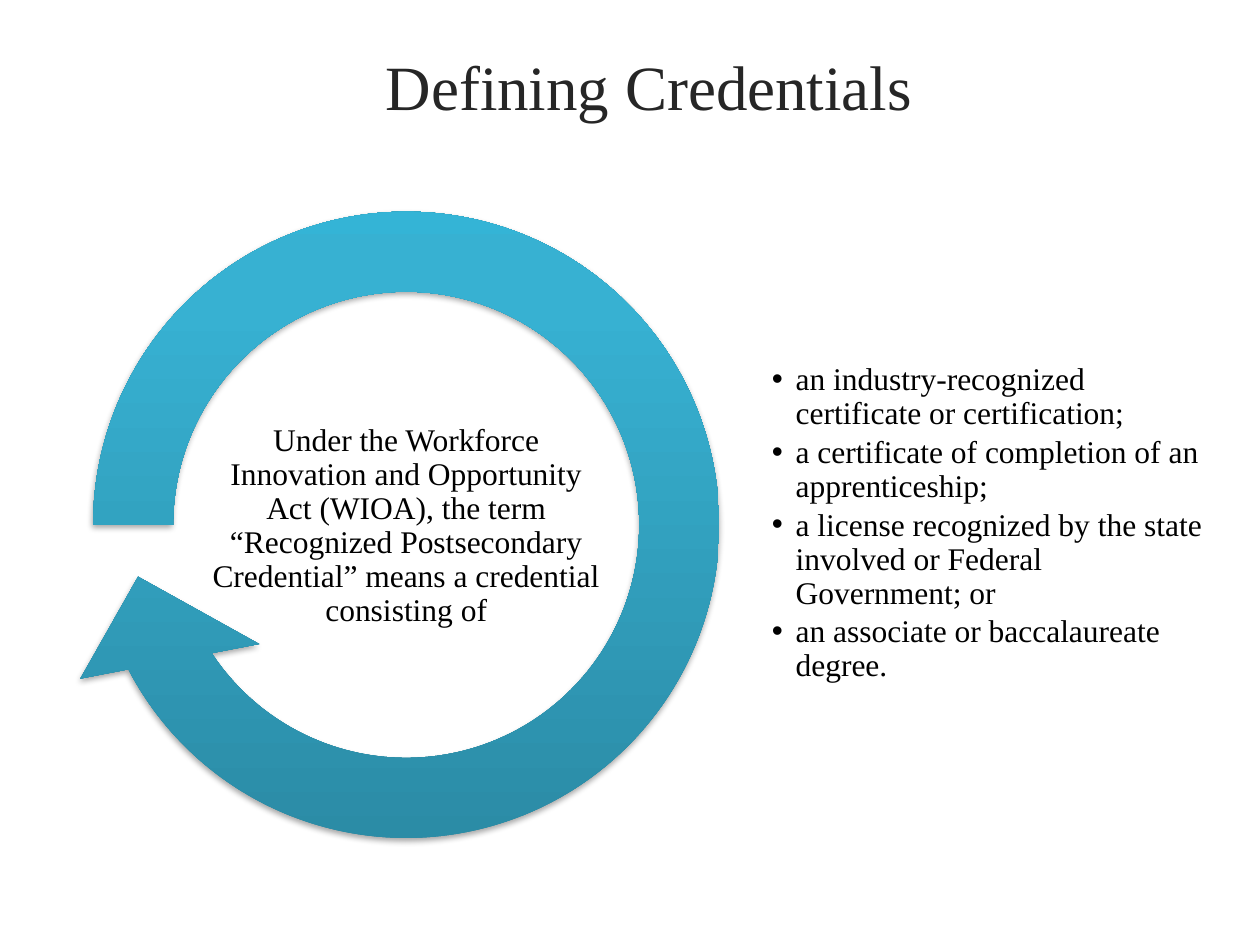
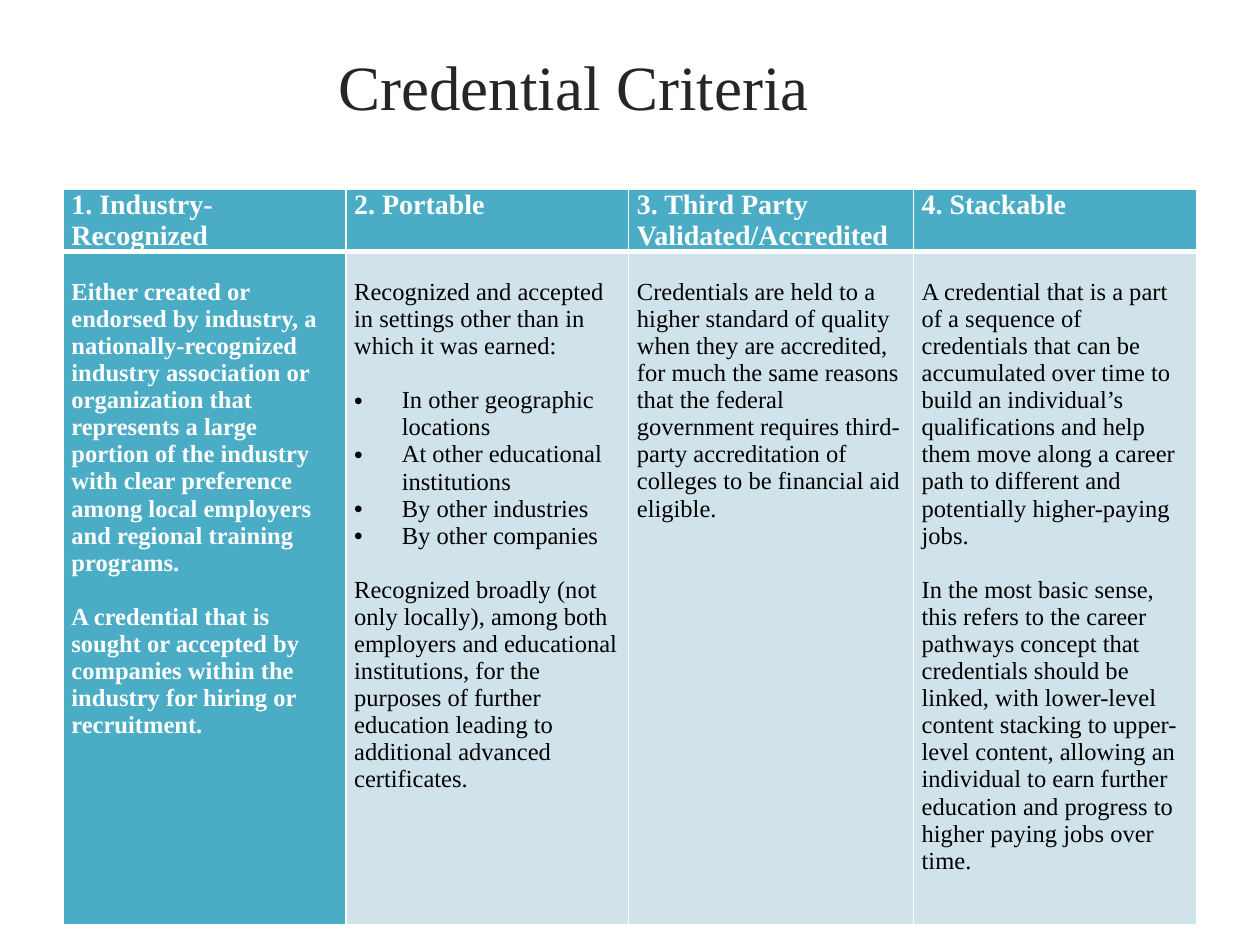
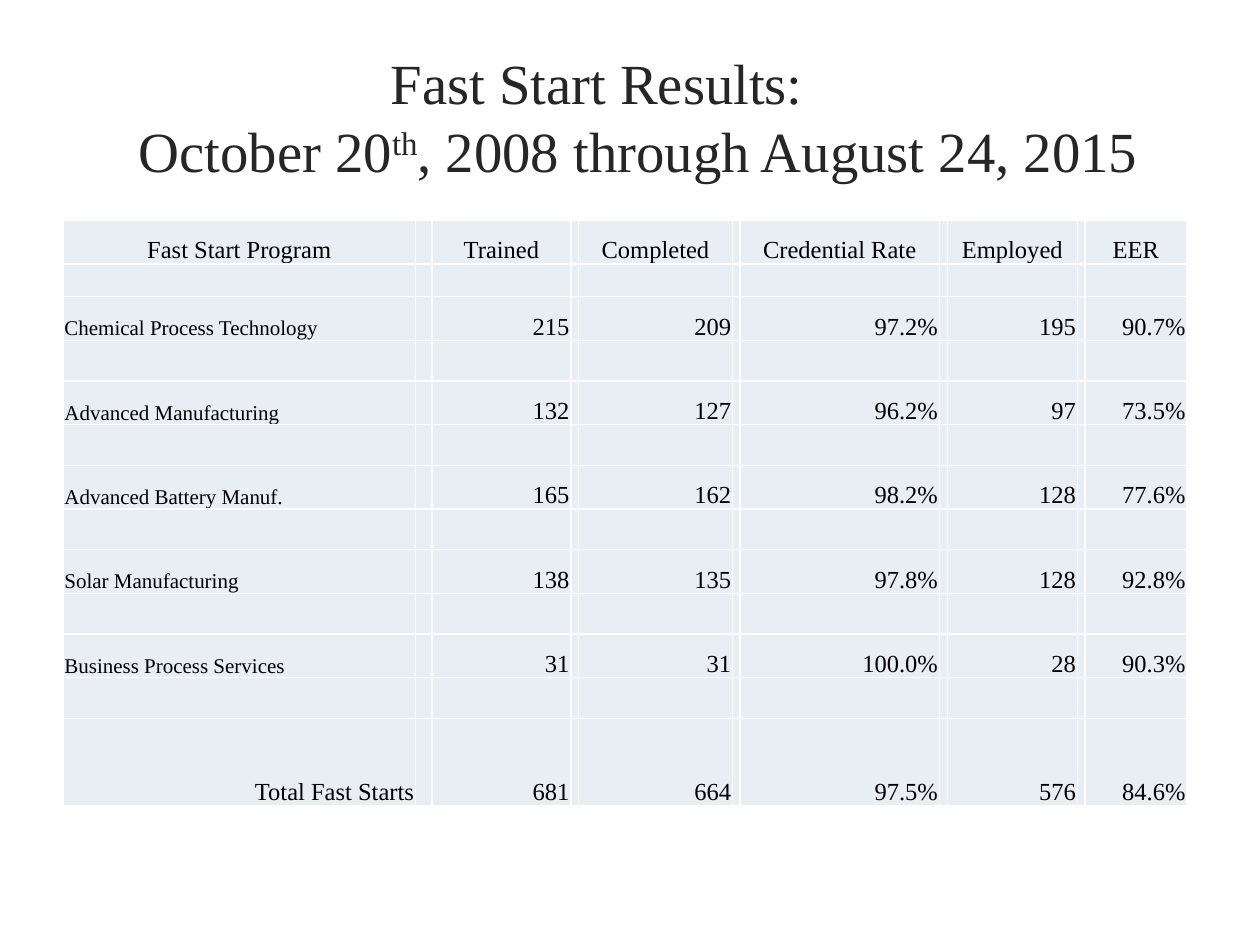
from copy import deepcopy

from lxml import etree
from pptx import Presentation
from pptx.dml.color import RGBColor
from pptx.enum.shapes import MSO_CONNECTOR, MSO_SHAPE
from pptx.enum.text import MSO_ANCHOR, MSO_AUTO_SIZE, PP_ALIGN
from pptx.oxml.ns import qn
from pptx.util import Cm, Pt

LEFT, CENTER, RIGHT = PP_ALIGN.LEFT, PP_ALIGN.CENTER, PP_ALIGN.RIGHT
TOP, MIDDLE, BOTTOM = MSO_ANCHOR.TOP, MSO_ANCHOR.MIDDLE, MSO_ANCHOR.BOTTOM
STRAIGHT = MSO_CONNECTOR.STRAIGHT
FONT = "Times New Roman"
COLORS = {
    "title": "262626", "text": "000000", "white": "FFFFFF",
    "teal": "4BACC6", "pale_teal": "D0E3EA", "pale_blue": "E9EDF4",
    "arrow_dark": "2A88A2", "arrow_mid": "37B1D2", "arrow_light": "34B4D6",
}


def write(tf, text, size, color="text", bold=False, left=0, bullet=False, **fmt):
    """Add a paragraph; text between carets is superscript, left is the indent in cm."""
    p = tf.paragraphs[0] if not tf.paragraphs[0].runs else tf.add_paragraph()
    pPr = p._p.get_or_add_pPr()
    pPr.set("marL", str(Cm(left)))
    if bullet:
        pPr.set("indent", str(-Cm(left)))
        etree.SubElement(pPr, qn("a:buFont"), typeface="Arial")
        etree.SubElement(pPr, qn("a:buChar"), char="•")
    for name, value in fmt.items():
        setattr(p, name, value)
    for i, part in enumerate(text.split("^")):
        r = p.add_run()
        r.text = part
        r.font.name, r.font.size, r.font.bold = FONT, Pt(size), bold
        r.font.color.rgb = RGBColor.from_string(COLORS[color])
        if i % 2:
            r._r.get_or_add_rPr().set("baseline", "30000")


def style_cell(cell, fill, margins, anchor, borders):
    """Margins are left, top, right, bottom in cm; borders are L, R, T, B in points."""
    cell.margin_left, cell.margin_top, cell.margin_right, cell.margin_bottom = map(Cm, margins)
    cell.vertical_anchor = anchor
    cell.fill.solid()
    cell.fill.fore_color.rgb = RGBColor.from_string(COLORS[fill])
    tcPr = cell._tc.get_or_add_tcPr()
    for i, (side, width) in enumerate(zip("LRTB", borders)):
        ln = etree.Element(qn(f"a:ln{side}"), w=str(Pt(width)))
        solid = etree.SubElement(ln, qn("a:solidFill"))
        etree.SubElement(solid, qn("a:srgbClr"), val=COLORS["white"])
        tcPr.insert(i, ln)


prs = Presentation()
prs.slide_width, prs.slide_height = Cm(25.4), Cm(19.05)

# Frame lines and titles: left, width, text size, lines with their indents
frame_lines = [(0.42, 0.64, 0.42, 19.05), (0.64, 0.42, 24.77, 0.42)]
titles = [
    (6.57, 17.58, 36, [("Defining Credentials", 0.95)]),
    (6.57, 17.58, 36, [("Credential Criteria", 0)]),
    (2.54, 21.59, 32.4, [("Fast Start Results:", 5.08),
                         ("October 20^th^, 2008 through August 24, 2015", 0)]),
]
slides = []
for left, width, size, lines in titles:
    s = prs.slides.add_slide(prs.slide_layouts[5])
    for ends in frame_lines:
        line = s.shapes.add_connector(STRAIGHT, *map(Cm, ends))
        line.line.width = Pt(2.5)
        line.line.color.rgb = RGBColor.from_string(COLORS["white"])
        etree.SubElement(line._element.spPr, qn("a:effectLst"))
    title = s.shapes.title
    title.left, title.top, title.width, title.height = Cm(left), Cm(0.84), Cm(width), Cm(2.97)
    tf = title.text_frame
    tf.word_wrap, tf.auto_size, tf.vertical_anchor = True, MSO_AUTO_SIZE.NONE, TOP
    for text, indent in lines:
        write(tf, text, size, "title", left=indent, alignment=LEFT)
    slides.append(s)
definition, criteria, results = slides

# Slide 1: circular arrow with the definition inside and the list beside it
sp = definition.shapes.add_shape(MSO_SHAPE.CIRCULAR_ARROW, Cm(0.85), Cm(3.24), Cm(14.68), Cm(14.68))
for i, value in enumerate([0.11, 11.42, 90, 108, 0.125]):
    sp.adjustments[i] = value
sp.line.fill.background()
sp.fill.gradient()
sp.fill.gradient_angle = 90
spPr = sp._element.spPr
stops = spPr.find(qn("a:gradFill")).find(qn("a:gsLst"))
stops.insert(1, deepcopy(stops[0]))
arrow_stops = [(0, "arrow_dark"), (0.8, "arrow_mid"), (1, "arrow_light")]
for stop, (position, color) in zip(sp.fill.gradient_stops, arrow_stops):
    stop.position = position
    stop.color.rgb = RGBColor.from_string(COLORS[color])
sp.shadow.inherit = False
shadow = etree.SubElement(spPr.find(qn("a:effectLst")), qn("a:outerShdw"),
                          blurRad=str(Pt(3.1)), dist=str(Pt(1.8)), dir="5400000", rotWithShape="0")
shade = etree.SubElement(shadow, qn("a:srgbClr"), val=COLORS["text"])
etree.SubElement(shade, qn("a:alpha"), val="35000")

list_format = {"left": 0.48, "bullet": True, "space_after": Pt(2.7)}
text_boxes = [
    ((15.53, 6.15, 8.81, 8.81), list_format, [
        "an industry-recognized certificate or certification;",
        "a certificate of completion of an apprenticeship;",
        "a license recognized by the state involved or Federal Government; or",
        "an associate or baccalaureate degree."]),
    ((4.19, 8.56, 8, 4.09), {"alignment": CENTER}, [
        "Under the Workforce Innovation and Opportunity Act (WIOA), the term “Recognized "
        "Postsecondary Credential” means a credential consisting of"]),
]
for box, fmt, texts in text_boxes:
    tf = definition.shapes.add_textbox(*map(Cm, box)).text_frame
    tf.word_wrap, tf.vertical_anchor = True, MIDDLE
    tf.margin_left = tf.margin_top = tf.margin_right = tf.margin_bottom = Cm(0.03)
    for text in texts:
        write(tf, text, 18, line_spacing=0.9, **fmt)

# Slide 2: one column per criterion
gap = {"space_before": Pt(15.5)}
item = {"left": 0.96, "bullet": True}
columns = [
    (5.7, "1. Industry-Recognized", [
        ("Either created or endorsed by industry, a nationally-recognized industry association or "
         "organization that represents a large portion of the industry with clear preference among "
         "local employers and regional training programs.", {}),
        ("A credential that is sought or accepted by companies within the industry for hiring or "
         "recruitment.", gap)]),
    (5.7, "2. Portable", [
        ("Recognized and accepted in settings other than in which it was earned:", {}),
        ("In other geographic locations", {**item, **gap}),
        ("At other educational institutions", item),
        ("By other industries", item),
        ("By other companies", item),
        ("Recognized broadly (not only locally), among both employers and educational institutions, "
         "for the purposes of further education leading to additional advanced certificates.", gap)]),
    (5.74, "3. Third Party Validated/Accredited", [
        ("Credentials are held to a higher standard of quality when they are accredited, for much "
         "the same reasons that the federal government requires third-party accreditation of "
         "colleges to be financial aid eligible.", {})]),
    (5.72, "4. Stackable", [
        ("A credential that is a part of a sequence of credentials that can be accumulated over time "
         "to build an individual’s qualifications and help them move along a career path to "
         "different and potentially higher-paying jobs.", {}),
        ("In the most basic sense, this refers to the career pathways concept that credentials "
         "should be linked, with lower-level content stacking to upper-level content, allowing an "
         "individual to earn further education and progress to higher paying jobs over time.", gap)]),
]
table = criteria.shapes.add_table(2, 4, Cm(1.27), Cm(3.81), Cm(22.86), Cm(14.82)).table
table.first_row = table.horz_banding = False
table.rows[0].height, table.rows[1].height = Cm(1.25), Cm(13.57)
for c, (width, heading, paragraphs) in enumerate(columns):
    table.columns[c].width = Cm(width)
    head, body = table.cell(0, c), table.cell(1, c)
    style_cell(head, "teal", (0.17, 0, 0.17, 0), TOP, (1, 1, 1, 3))
    write(head.text_frame, heading, 16, "white", True)
    first = c == 0
    style_cell(body, "teal" if first else "pale_teal", (0.17, 0.55, 0.17, 0), TOP, (1, 1, 3, 1))
    for text, fmt in paragraphs:
        write(body.text_frame, text, 14, "white" if first else "text", first, **fmt)

# Slide 3: figures in every other row and column, narrow spacers between them
figures = [
    ["Fast Start Program", "Trained", "Completed", "Credential Rate", "Employed", "EER"],
    ["Chemical Process Technology", "215", "209", "97.2%", "195", "90.7%"],
    ["Advanced Manufacturing", "132", "127", "96.2%", "97", "73.5%"],
    ["Advanced Battery Manuf.", "165", "162", "98.2%", "128", "77.6%"],
    ["Solar Manufacturing", "138", "135", "97.8%", "128", "92.8%"],
    ["Business Process Services", "31", "31", "100.0%", "28", "90.3%"],
    ["Total Fast Starts", "681", "664", "97.5%", "576", "84.6%"],
]
widths = [7.11, 0.33, 2.8, 0.15, 3.11, 0.15, 4.02, 0.16, 2.62, 0.15, 2.06]
heights = [0.87, 0.66] + [0.88, 0.82] * 5 + [1.77]
table = results.shapes.add_table(len(heights), len(widths), Cm(1.27), Cm(4.45),
                                 Cm(sum(widths)), Cm(sum(heights))).table
table.first_row = table.horz_banding = False
for column, width in zip(table.columns, widths):
    column.width = Cm(width)
last = len(heights) - 1
for r, height in enumerate(heights):
    table.rows[r].height = Cm(height)
    for c in range(len(widths)):
        cell = table.cell(r, c)
        is_spacer = r % 2 or c % 2
        margins = (0, 0, 0, 0) if is_spacer else (0.03, 0.03, 0.03, 0)
        style_cell(cell, "pale_blue", margins, BOTTOM, (1, 1, 1, 1))
        if is_spacer:
            etree.SubElement(cell.text_frame.paragraphs[0]._p, qn("a:endParaRPr"), sz="1000")
            continue
        is_program = c == 0 and 0 < r < last
        align = CENTER if r == 0 else LEFT if is_program else RIGHT
        write(cell.text_frame, figures[r // 2][c // 2], 12 if is_program else 14, alignment=align)

prs.save("out.pptx")
